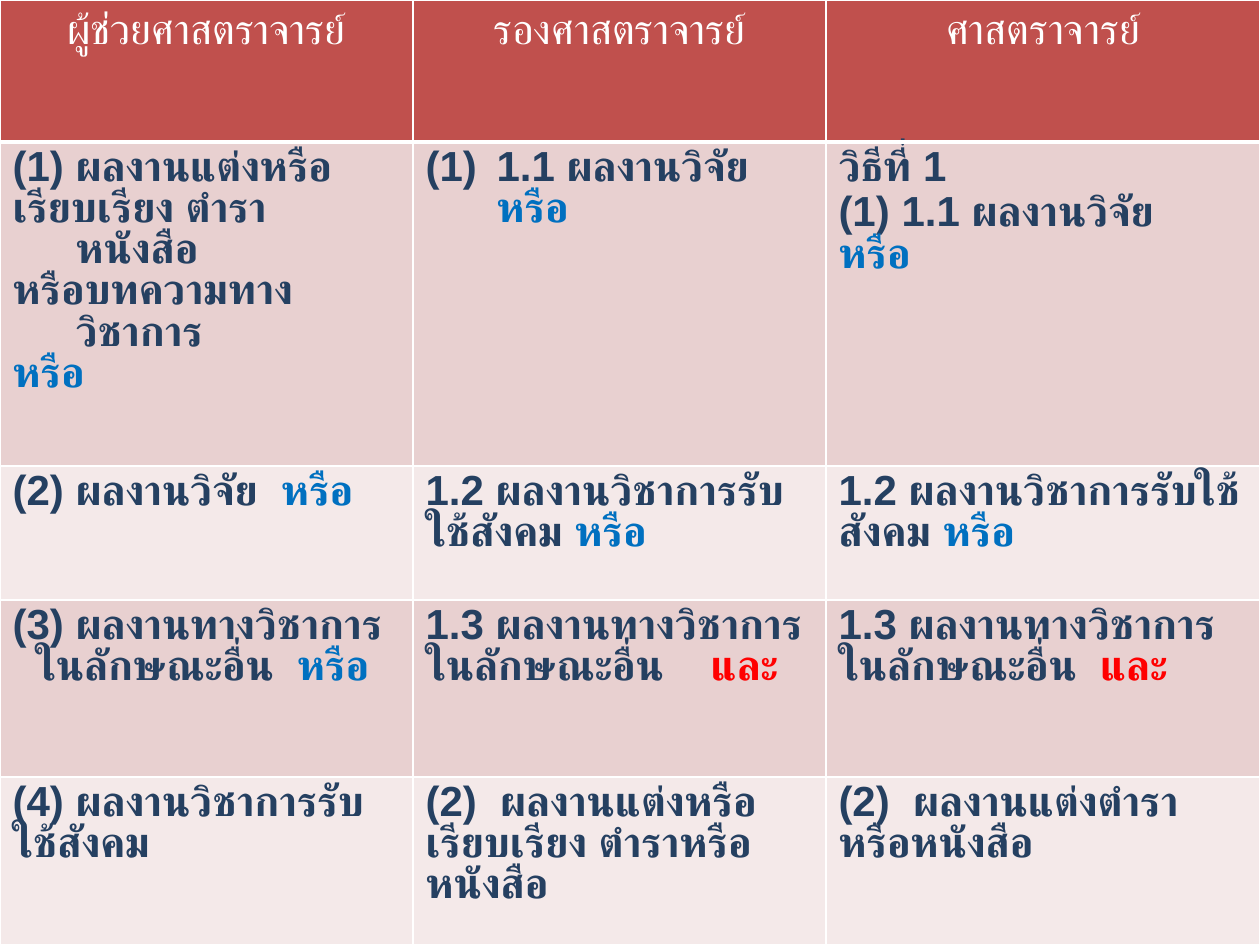
from lxml import etree
from pptx import Presentation
from pptx.dml.color import RGBColor
from pptx.enum.text import PP_ALIGN
from pptx.oxml.ns import qn
from pptx.util import Pt

PX = 914400 // 126
CENTER, LEFT = PP_ALIGN.CENTER, PP_ALIGN.LEFT
WHITE, NAVY, BLUE, RED = "FFFFFF", "254061", "0070C0", "FF0000"
HEAD, DARK, PALE = "C0504D", "E8D0D0", "F4E9E9"
OR, AND = "หรือ", "และ"
TAILS = {OR: BLUE, AND: RED}


def rgb(code):
    return RGBColor.from_string(code)


def write(para, text, tail="", color=NAVY, bold=True, align=LEFT,
          line=0.88, before=0, hang=0, number=False, tab=0):
    """Fill a paragraph; the tail word takes its own colour."""
    para.alignment = align
    para.line_spacing = line
    para.space_before = Pt(before)
    props = para._p.get_or_add_pPr()
    if hang:
        props.set("marL", str(hang * PX))
        props.set("indent", str(-hang * PX))
    if number:
        etree.SubElement(props, qn("a:buFont"), typeface="Arial")
        etree.SubElement(props, qn("a:buAutoNum"), type="arabicParenBoth")
    if tab:
        stops = etree.SubElement(props, qn("a:tabLst"))
        etree.SubElement(stops, qn("a:tab"), pos=str(tab * PX), algn="l")
    for part, tint in ((text, color), (tail, TAILS.get(tail))):
        if part:
            run = para.add_run()
            run.text = part
            font = run.font
            font.name, font.size, font.bold = "Arial", Pt(24), bold
            font.color.rgb = rgb(tint)
            etree.SubElement(run._r.rPr, qn("a:cs"), typeface="Arial")


# Slide
deck = Presentation()
deck.slide_width, deck.slide_height = 1260 * PX, 945 * PX
slide = deck.slides.add_slide(deck.slide_layouts[6])

# Table grid
cols = [413, 413, 434]
rows = [142, 324, 134, 177, 168]
frame = slide.shapes.add_table(len(rows), len(cols), 0, 0,
                               sum(cols) * PX, sum(rows) * PX)
table = frame.table
table.horz_banding = False
for col, width in zip(table.columns, cols):
    col.width = width * PX
for row, height in zip(table.rows, rows):
    row.height = height * PX

# Wording: each cell is a list of (text, tail, format)
top = dict(color=WHITE, bold=False, align=CENTER, line=1.0)
item = dict(hang=63)
lead = dict(before=2.5)
grid = [
    [[("ผู้ช่วยศาสตราจารย์", "", top)],
     [("รองศาสตราจารย์", "", top)],
     [("ศาสตราจารย์", "", top)]],
    [[("ผลงานแต่งหรือ", "", dict(item, number=True)),
      ("เรียบเรียง ตำรา หนังสือ", "", item),
      ("หรือบทความทางวิชาการ", "", item),
      ("", OR, item)],
     [("1.1 ผลงานวิจัย ", OR, dict(lead, hang=71, number=True))],
     [("วิธีที่ 1", "", lead), ("(1) 1.1 ผลงานวิจัย  ", OR, lead)]],
    [[("(2) ผลงานวิจัย  ", OR, lead)],
     [("1.2 ผลงานวิชาการรับใช้สังคม ", OR, lead)],
     [("1.2 ผลงานวิชาการรับใช้สังคม ", OR, lead)]],
    [[("(3) ผลงานทางวิชาการ ในลักษณะอื่น  ", OR, dict(lead, hang=23))],
     [("1.3 ผลงานทางวิชาการในลักษณะอื่น\t", AND, dict(lead, tab=285))],
     [("1.3 ผลงานทางวิชาการในลักษณะอื่น  ", AND, lead)]],
    [[("(4) ผลงานวิชาการรับใช้สังคม", "", lead)],
     [("(2)  ผลงานแต่งหรือเรียบเรียง ตำราหรือหนังสือ", "", lead)],
     [("(2)  ผลงานแต่งตำรา หรือหนังสือ", "", lead)]],
]

# Cells: text, white borders, fill
fills = [HEAD, DARK, PALE, DARK, PALE]
for r, line in enumerate(grid):
    for c, paras in enumerate(line):
        cell = table.cell(r, c)
        body = cell.text_frame
        for n, (text, tail, form) in enumerate(paras):
            para = body.add_paragraph() if n else body.paragraphs[0]
            write(para, text, tail, **form)
        props = cell._tc.get_or_add_tcPr()
        for side in "LRTB":
            wide = Pt(3 if r == 0 and side == "B" else 1)
            edge = etree.SubElement(props, qn("a:ln" + side), w=str(wide))
            paint = etree.SubElement(edge, qn("a:solidFill"))
            etree.SubElement(paint, qn("a:srgbClr"), val=WHITE)
        cell.fill.solid()
        cell.fill.fore_color.rgb = rgb(fills[r])

deck.save("out.pptx")
